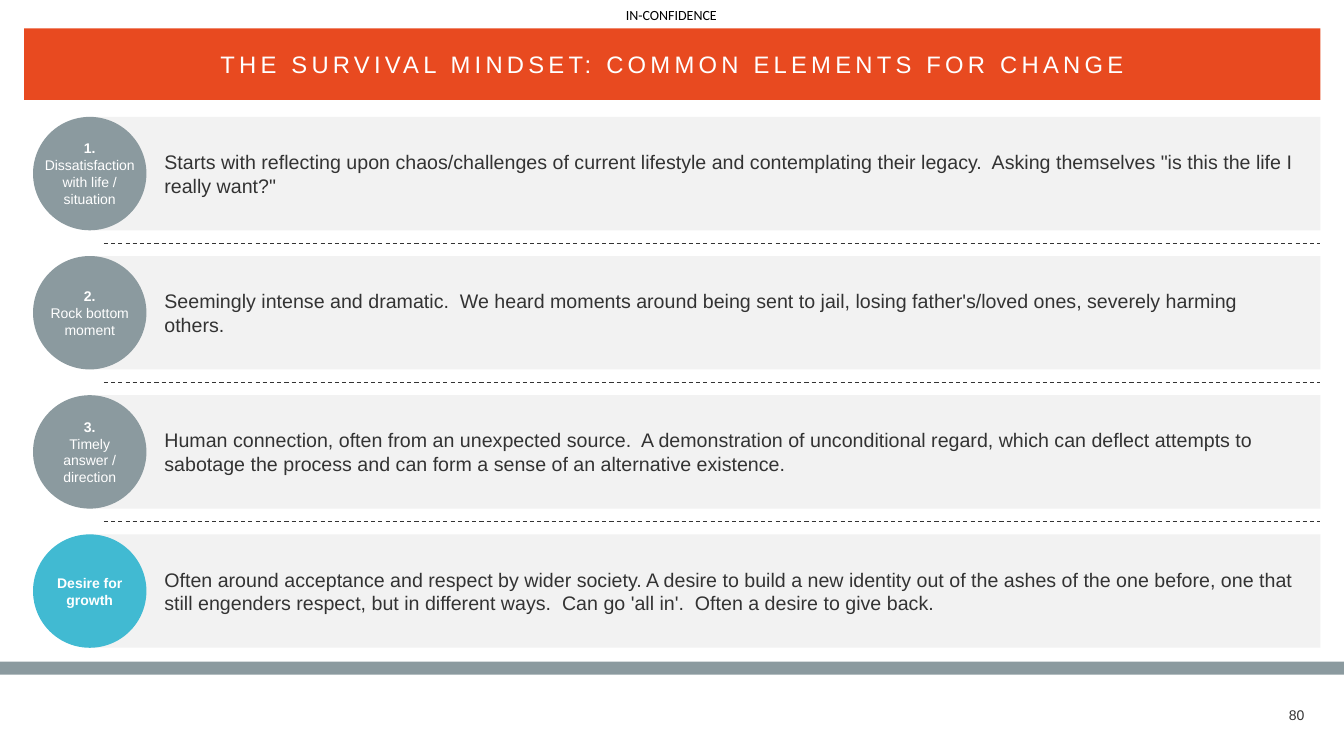
from dataclasses import dataclass

from lxml.etree import SubElement
from pptx import Presentation
from pptx.dml.color import RGBColor
from pptx.enum.dml import MSO_LINE
from pptx.enum.shapes import MSO_CONNECTOR, MSO_SHAPE
from pptx.enum.text import MSO_ANCHOR, PP_ALIGN
from pptx.oxml.ns import qn
from pptx.shapes.autoshape import Shape
from pptx.shapes.shapetree import GroupShapes, SlideShapes
from pptx.util import Pt

ORANGE = RGBColor(0xE8, 0x4A, 0x20)
SLATE = RGBColor(0x8B, 0x9A, 0x9F)
TEAL = RGBColor(0x41, 0xBA, 0xD2)
PANEL = RGBColor(0xF2, 0xF2, 0xF2)
INK = RGBColor(0x33, 0x33, 0x33)
WHITE = RGBColor(0xFF, 0xFF, 0xFF)
BLACK = RGBColor(0, 0, 0)

SLIDE_W, SLIDE_H = 960, 540
RIGHT = 943.2
ROW_TOP, ROW_H, ROW_PITCH = 83.5, 81, 99.4
PANEL_LEFT, CIRCLE_LEFT, DIVIDER_LEFT = 63.4, 23.6, 74.2


@dataclass(frozen=True)
class Box:
    left: float
    top: float
    width: float
    height: float

    def lengths(self) -> list[Pt]:
        return [Pt(v) for v in (self.left, self.top, self.width, self.height)]


@dataclass(frozen=True)
class Line:
    text: str
    bold: bool = False


@dataclass(frozen=True)
class TextStyle:
    size: float
    color: RGBColor
    align: PP_ALIGN = PP_ALIGN.LEFT
    anchor: MSO_ANCHOR = MSO_ANCHOR.MIDDLE
    font: str = "Arial"
    left: float = 0
    right: float = 0
    wrap: bool = True
    spacing: int = 0


@dataclass(frozen=True)
class Element:
    label: list[Line]
    body: str
    color: RGBColor = SLATE
    wrap: bool = True


ELEMENTS = [
    Element(
        [Line("1.", True), Line("Dissatisfaction"), Line("with life /"), Line("situation")],
        "Starts with reflecting upon chaos/challenges of current lifestyle and "
        "contemplating their legacy.  Asking themselves \"is this the life I really want?\"",
        wrap=False,
    ),
    Element(
        [Line("2.", True), Line("Rock bottom moment")],
        "Seemingly intense and dramatic.  We heard moments around being sent to jail, "
        "losing father's/loved ones, severely harming others.",
    ),
    Element(
        [Line("3.", True), Line("Timely answer / direction")],
        "Human connection, often from an unexpected source.  A demonstration of "
        "unconditional regard, which can deflect attempts to sabotage the process and "
        "can form a sense of an alternative existence.",
    ),
    Element(
        [Line("Desire for growth", True)],
        "Often around acceptance and respect by wider society. A desire to build a new "
        "identity out of the ashes of the one before, one that still engenders respect, "
        "but in different ways.  Can go 'all in'.  Often a desire to give back.",
        TEAL,
    ),
]


def write(sp: Shape, lines: list[Line], style: TextStyle) -> None:
    tf = sp.text_frame
    frame = {
        "word_wrap": style.wrap,
        "vertical_anchor": style.anchor,
        "margin_left": Pt(style.left),
        "margin_right": Pt(style.right),
        "margin_top": 0,
        "margin_bottom": 0,
    }
    for name, value in frame.items():
        setattr(tf, name, value)
    for i, line in enumerate(lines):
        p = tf.add_paragraph() if i else tf.paragraphs[0]
        p.alignment = style.align
        r = p.add_run()
        r.text = line.text
        for name, value in {"name": style.font, "size": Pt(style.size), "bold": line.bold}.items():
            setattr(r.font, name, value)
        r.font.color.rgb = style.color
        if style.spacing:
            r.font._element.set("spc", str(style.spacing))


def add_filled(shapes: SlideShapes, kind: MSO_SHAPE, box: Box, color: RGBColor) -> Shape:
    sp = shapes.add_shape(kind, *box.lengths())
    sp.shadow.inherit = False
    sp.fill.solid()
    sp.fill.fore_color.rgb = color
    sp.line.fill.background()
    return sp


def add_label(shapes: SlideShapes, box: Box, text: str, style: TextStyle) -> None:
    write(shapes.add_textbox(*box.lengths()), [Line(text)], style)


def add_element(shapes: SlideShapes, element: Element, top: float) -> None:
    panel = add_filled(
        shapes, MSO_SHAPE.RECTANGLE, Box(PANEL_LEFT, top, RIGHT - PANEL_LEFT, ROW_H), PANEL
    )
    write(panel, [Line(element.body)], TextStyle(14, INK, left=54, right=14.4))
    circle = add_filled(shapes, MSO_SHAPE.OVAL, Box(CIRCLE_LEFT, top, ROW_H, ROW_H), element.color)
    write(circle, element.label, TextStyle(10, WHITE, PP_ALIGN.CENTER, wrap=element.wrap))


def add_divider(shapes: GroupShapes, y: float) -> None:
    line = shapes.add_connector(
        MSO_CONNECTOR.STRAIGHT, Pt(DIVIDER_LEFT), Pt(y), Pt(RIGHT), Pt(y)
    )
    line.line.color.rgb = INK
    for name, value in {"width": Pt(0.75), "dash_style": MSO_LINE.DASH}.items():
        setattr(line.line, name, value)
    SubElement(line._element.spPr, qn("a:effectLst"))


def main() -> None:
    prs = Presentation()
    prs.slide_width, prs.slide_height = Pt(SLIDE_W), Pt(SLIDE_H)
    s = prs.slides.add_slide(prs.slide_layouts[6])
    shapes = s.shapes

    add_label(shapes, Box(904.3, 503.3, 27.4, 15), "80", TextStyle(10, INK, PP_ALIGN.RIGHT))
    add_filled(shapes, MSO_SHAPE.RECTANGLE, Box(0, 472.7, SLIDE_W, 9.3), SLATE)
    add_label(
        shapes,
        Box(447.1, 5, 67.7, 12.2),
        "IN-CONFIDENCE",
        TextStyle(10, BLACK, anchor=MSO_ANCHOR.TOP, font="Calibri", wrap=False),
    )
    title = add_filled(shapes, MSO_SHAPE.RECTANGLE, Box(17.2, 20.2, RIGHT - 17.2, 51.1), ORANGE)
    write(
        title,
        [Line("THE SURVIVAL MINDSET: COMMON ELEMENTS FOR CHANGE")],
        TextStyle(17, WHITE, PP_ALIGN.CENTER, left=7.2, right=7.2, spacing=300),
    )

    tops = [ROW_TOP + i * ROW_PITCH for i in range(len(ELEMENTS))]
    for element, top in zip(ELEMENTS, tops):
        add_element(shapes, element, top)
    dividers = shapes.add_group_shape()
    for top in tops[1:]:
        add_divider(dividers.shapes, top - (ROW_PITCH - ROW_H) / 2)

    prs.save("out.pptx")


if __name__ == "__main__":
    main()
